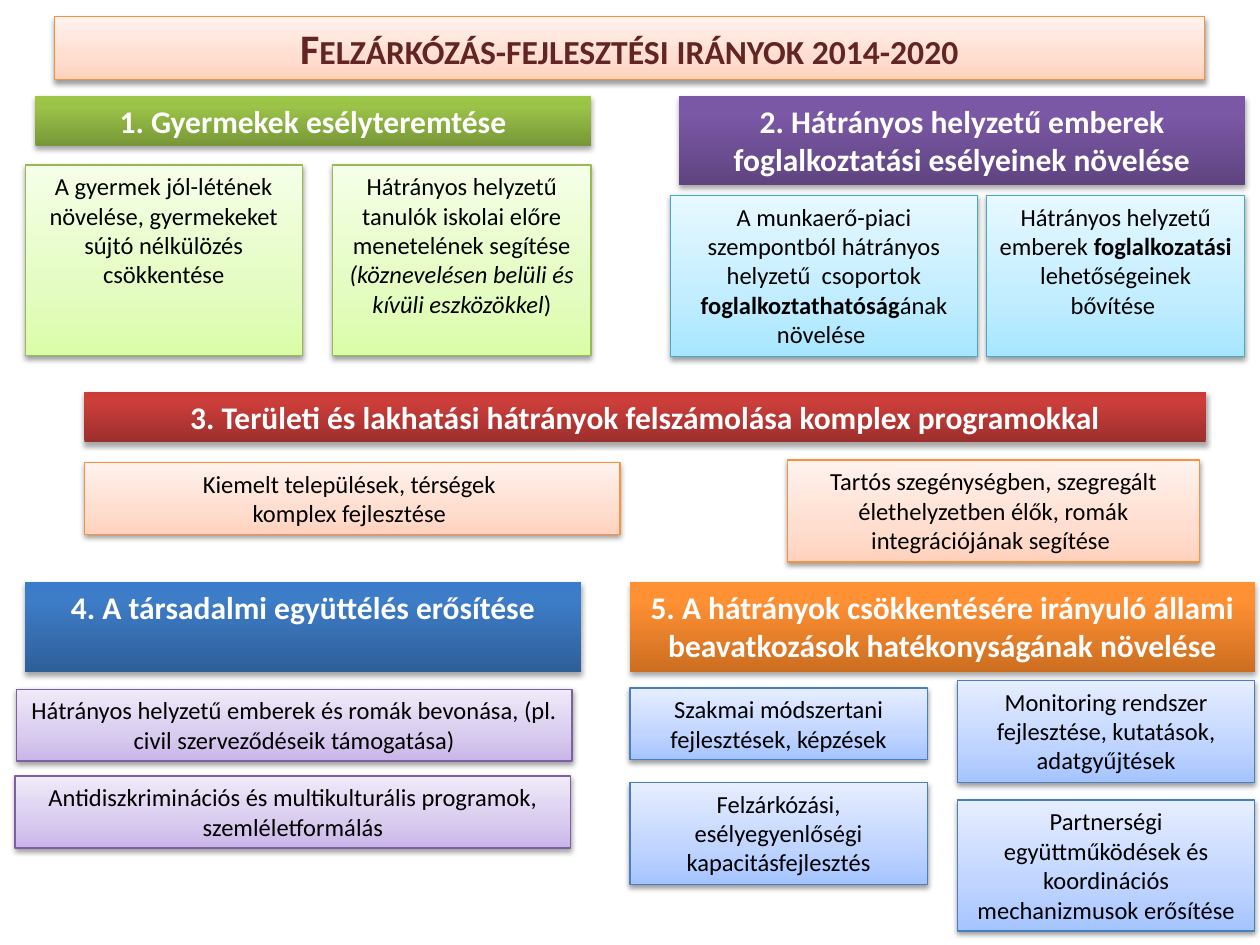
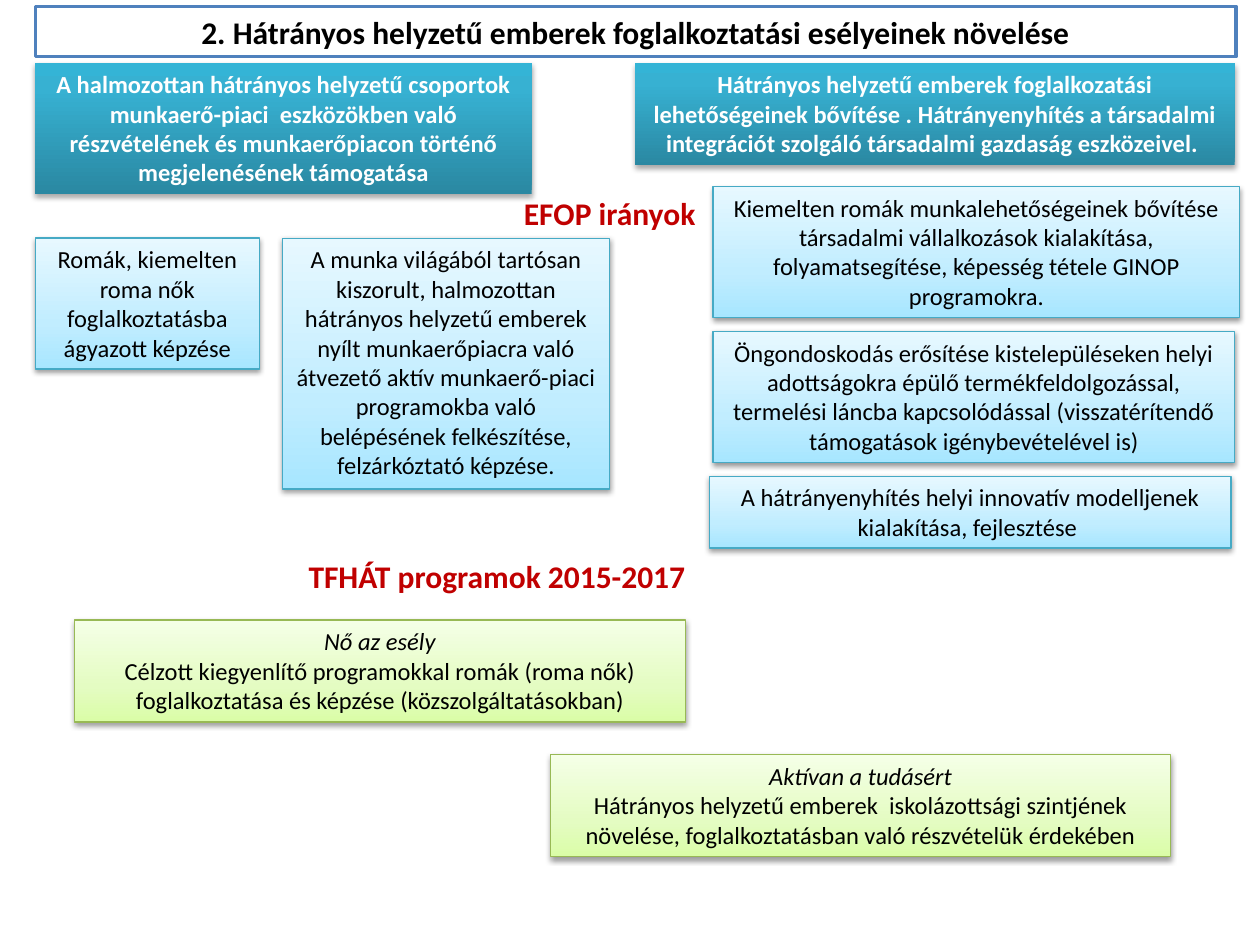
from copy import deepcopy

from lxml.etree import SubElement
from pptx import Presentation
from pptx.dml.color import RGBColor
from pptx.enum.shapes import MSO_SHAPE
from pptx.enum.text import MSO_ANCHOR, MSO_AUTO_SIZE, PP_ALIGN
from pptx.oxml.ns import qn
from pptx.util import Inches, Pt

FONT = "Calibri"
BLACK, WHITE, RED, MAROON = "000000", "FFFFFF", "C00000", "632523"

# Heading bands: gradient colours from bottom to top
BANDS = {
    "green": ("779737", "9BC348", "9DC746"),
    "purple": ("5F4480", "7B58A6", "7C57A8"),
    "red": ("9C2F2D", "CB3E3A", "CE3B37"),
    "orange": ("CC6E20", "FF9034", "FF9136"),
    "blue": ("2F5F99", "3D7CC7", "3A7CCB"),
    "teal": ("2A88A2", "37B1D2", "34B4D6"),
}
# Pale cards: gradient colours from bottom to top, and the outline
CARDS = {
    "green": (("DAFDA7", "E4FCC2", "F5FFE7"), "98B955"),
    "teal": (("A7E6FF", "C1EDFF", "E7F8FF"), "46AAC5"),
    "orange": (("FFD2BD", "FFDED0", "FFF2ED"), "F69240"),
    "purple": (("C9B5E8", "D8CBEE", "F0EAF9"), "7D60A0"),
    "blue": (("A4C4FF", "BFD4FF", "E6EEFF"), "4B7EBC"),
}


def rgb(color):
    return RGBColor.from_string(color)


def write(shape, text, size=14, color=BLACK, bold=False, emphasis="italic",
          align=PP_ALIGN.CENTER, anchor=MSO_ANCHOR.TOP, small_caps=False):
    """Fill the shape with text; parts between asterisks get the emphasis."""
    frame = shape.text_frame
    frame.word_wrap = True
    frame.auto_size = MSO_AUTO_SIZE.NONE
    frame.vertical_anchor = anchor
    for number, line in enumerate(text.split("\n")):
        para = frame.add_paragraph() if number else frame.paragraphs[0]
        para.alignment = align
        for part, words in enumerate(line.split("*")):
            if not words:
                continue
            span = para.add_run()
            span.text = words
            font = span.font
            font.name, font.size, font.bold = FONT, Pt(size), bold
            font.color.rgb = rgb(color)
            if part % 2:
                setattr(font, emphasis, True)
            if small_caps:
                span._r.get_or_add_rPr().set("cap", "small")


def fill_gradient(shape, colors, middle):
    """Blend three colours upwards, the second at the given position."""
    fill = shape.fill
    fill.gradient()
    fill.gradient_angle = 90
    stop_list = shape._element.spPr.find(".//" + qn("a:gsLst"))
    stop_list.append(deepcopy(stop_list[-1]))
    for stop, color, position in zip(fill.gradient_stops, colors, (0, middle, 1)):
        stop.color.rgb = rgb(color)
        stop.position = position


def set_outline(shape, color, width):
    shape.line.color.rgb = rgb(color)
    shape.line.width = Pt(width)


def drop_shadow(shape, distance, opacity):
    shape.shadow.inherit = False
    effects = shape._element.spPr.find(qn("a:effectLst"))
    shadow = SubElement(effects, qn("a:outerShdw"), blurRad=str(Pt(3.1)),
                        dist=str(Pt(distance)), dir="5400000", rotWithShape="0")
    tint = SubElement(shadow, qn("a:srgbClr"), val=BLACK)
    SubElement(tint, qn("a:alpha"), val=str(opacity * 1000))


def style_card(shape, palette):
    colors, outline = CARDS[palette]
    fill_gradient(shape, colors, 0.35)
    set_outline(shape, outline, 0.75)
    drop_shadow(shape, 1.6, 38)


def add_box(page, place):
    return page.shapes.add_shape(MSO_SHAPE.RECTANGLE, *map(Inches, place))


def add_band(page, place, palette, text, size=18):
    box = add_box(page, place)
    fill_gradient(box, BANDS[palette], 0.8)
    box.line.fill.background()
    drop_shadow(box, 1.8, 35)
    write(box, text, size=size, color=WHITE, bold=True)


def add_card(page, place, palette, text, emphasis="italic"):
    box = add_box(page, place)
    style_card(box, palette)
    write(box, text, emphasis=emphasis)


def add_label(page, place, text):
    box = page.shapes.add_textbox(*map(Inches, place))
    write(box, text, size=18, color=RED, bold=True, align=PP_ALIGN.LEFT)


def add_page(deck, place, title, **text_format):
    """Add a title-only slide and return it with its placed title."""
    page = deck.slides.add_slide(deck.slide_layouts[5])
    box = page.shapes.title
    box.left, box.top, box.width, box.height = map(Inches, place)
    write(box, title, bold=True, **text_format)
    return page, box


def build_directions(deck):
    page, title = add_page(deck, (0.43, 0.13, 9.13, 0.5),
                           "Felzárkózás-fejlesztési irányok 2014-2020",
                           size=24, color=MAROON, small_caps=True)
    style_card(title, "orange")

    add_band(page, (0.28, 0.76, 4.41, 0.4), "green", "1. Gyermekek esélyteremtése")
    add_card(page, (0.2, 1.31, 2.2, 1.51), "green",
             "A gyermek jól-létének növelése, gyermekeket sújtó nélkülözés csökkentése")
    add_card(page, (2.64, 1.31, 2.05, 1.51), "green",
             "Hátrányos helyzetű tanulók iskolai előre menetelének segítése "
             "*(köznevelésen belüli és kívüli eszközökkel*)")

    add_band(page, (5.39, 0.76, 4.49, 0.71), "purple",
             "2. Hátrányos helyzetű emberek foglalkoztatási esélyeinek növelése")
    add_card(page, (5.32, 1.55, 2.44, 1.28), "teal",
             "A munkaerő-piaci szempontból hátrányos helyzetű  csoportok "
             "*foglalkoztathatóság*ának növelése ", emphasis="bold")
    add_card(page, (7.83, 1.55, 2.05, 1.28), "teal",
             "Hátrányos helyzetű emberek *foglalkozatási *lehetőségeinek bővítése ",
             emphasis="bold")

    add_band(page, (0.67, 3.11, 8.9, 0.4), "red",
             "3. Területi és lakhatási hátrányok felszámolása komplex programokkal")
    add_card(page, (0.67, 3.67, 4.25, 0.57), "orange",
             "Kiemelt települések, térségek \nkomplex fejlesztése ")
    add_card(page, (6.25, 3.65, 3.27, 0.81), "orange",
             "Tartós szegénységben, szegregált élethelyzetben élők, "
             "romák integrációjának segítése ")

    add_band(page, (0.2, 4.62, 4.41, 0.71), "blue",
             "4. A társadalmi együttélés erősítése")
    add_card(page, (0.13, 5.47, 4.41, 0.57), "purple",
             "Hátrányos helyzetű emberek és romák bevonása, "
             "(pl. civil szerveződéseik támogatása)")
    add_card(page, (0.12, 6.16, 4.41, 0.57), "purple",
             "Antidiszkriminációs és multikulturális programok, szemléletformálás")

    add_band(page, (5, 4.62, 4.96, 0.71), "orange",
             "5. A hátrányok csökkentésére irányuló állami beavatkozások "
             "hatékonyságának növelése")
    for left, top, height, text in (
        (5, 5.46, 0.57, "Szakmai módszertani fejlesztések, képzések"),
        (7.6, 5.4, 0.81, "Monitoring rendszer fejlesztése, kutatások, adatgyűjtések"),
        (5, 6.21, 0.81, "Felzárkózási, esélyegyenlőségi kapacitásfejlesztés"),
        (7.6, 6.35, 1.04, "Partnerségi együttműködések és koordinációs "
                          "mechanizmusok erősítése"),
    ):
        add_card(page, (left, top, 2.36, height), "blue", text)


def build_employment(deck):
    page, title = add_page(
        deck, (0.28, 0.05, 9.53, 0.4),
        "2. Hátrányos helyzetű emberek foglalkoztatási esélyeinek növelése", size=18)
    title.fill.solid()
    title.fill.fore_color.rgb = rgb(WHITE)
    set_outline(title, "4F81BD", 2)

    add_band(page, (0.28, 0.5, 3.94, 1.04), "teal",
             "A halmozottan hátrányos helyzetű csoportok munkaerő-piaci  eszközökben "
             "való részvételének és munkaerőpiacon történő megjelenésének támogatása",
             size=14)
    add_band(page, (5.04, 0.5, 4.76, 0.81), "teal",
             "Hátrányos helyzetű emberek foglalkozatási lehetőségeinek bővítése . "
             "Hátrányenyhítés a társadalmi integrációt szolgáló társadalmi gazdaság "
             "eszközeivel. ", size=14)

    add_label(page, (4.06, 1.49, 1.74, 0.4), "EFOP irányok")
    add_card(page, (0.28, 1.89, 1.78, 1.04), "teal",
             "Romák, kiemelten roma nők foglalkoztatásba ágyazott képzése")
    add_card(page, (2.24, 1.89, 2.6, 1.99), "teal",
             "A munka világából tartósan kiszorult, halmozottan hátrányos helyzetű "
             "emberek nyílt munkaerőpiacra való átvezető aktív munkaerő-piaci "
             "programokba való belépésének felkészítése, felzárkóztató képzése.")
    add_card(page, (5.66, 1.48, 4.18, 1.04), "teal",
             "Kiemelten romák munkalehetőségeinek bővítése társadalmi vállalkozások "
             "kialakítása, folyamatsegítése, képesség tétele GINOP programokra.")
    add_card(page, (5.66, 2.63, 4.14, 1.04), "teal",
             "Öngondoskodás erősítése kistelepüléseken helyi adottságokra épülő "
             "termékfeldolgozással, termelési láncba kapcsolódással "
             "(visszatérítendő támogatások igénybevételével is)")
    add_card(page, (5.63, 3.78, 4.14, 0.57), "teal",
             "A hátrányenyhítés helyi innovatív modelljenek kialakítása, fejlesztése ")

    add_label(page, (2.35, 4.37, 3.28, 0.4), "TFHÁT programok 2015-2017")
    add_card(page, (0.59, 4.92, 4.85, 0.81), "green",
             "*Nő az esély*\nCélzott kiegyenlítő programokkal romák (roma nők) "
             "foglalkoztatása és képzése (közszolgáltatásokban)")
    add_card(page, (4.37, 5.99, 4.92, 0.81), "green",
             "*Aktívan a tudásért*\nHátrányos helyzetű emberek  iskolázottsági "
             "szintjének növelése, foglalkoztatásban való részvételük érdekében")


def main():
    deck = Presentation()
    deck.slide_width, deck.slide_height = Inches(10), Inches(7.5)
    build_directions(deck)
    build_employment(deck)
    deck.save("out.pptx")


if __name__ == "__main__":
    main()
